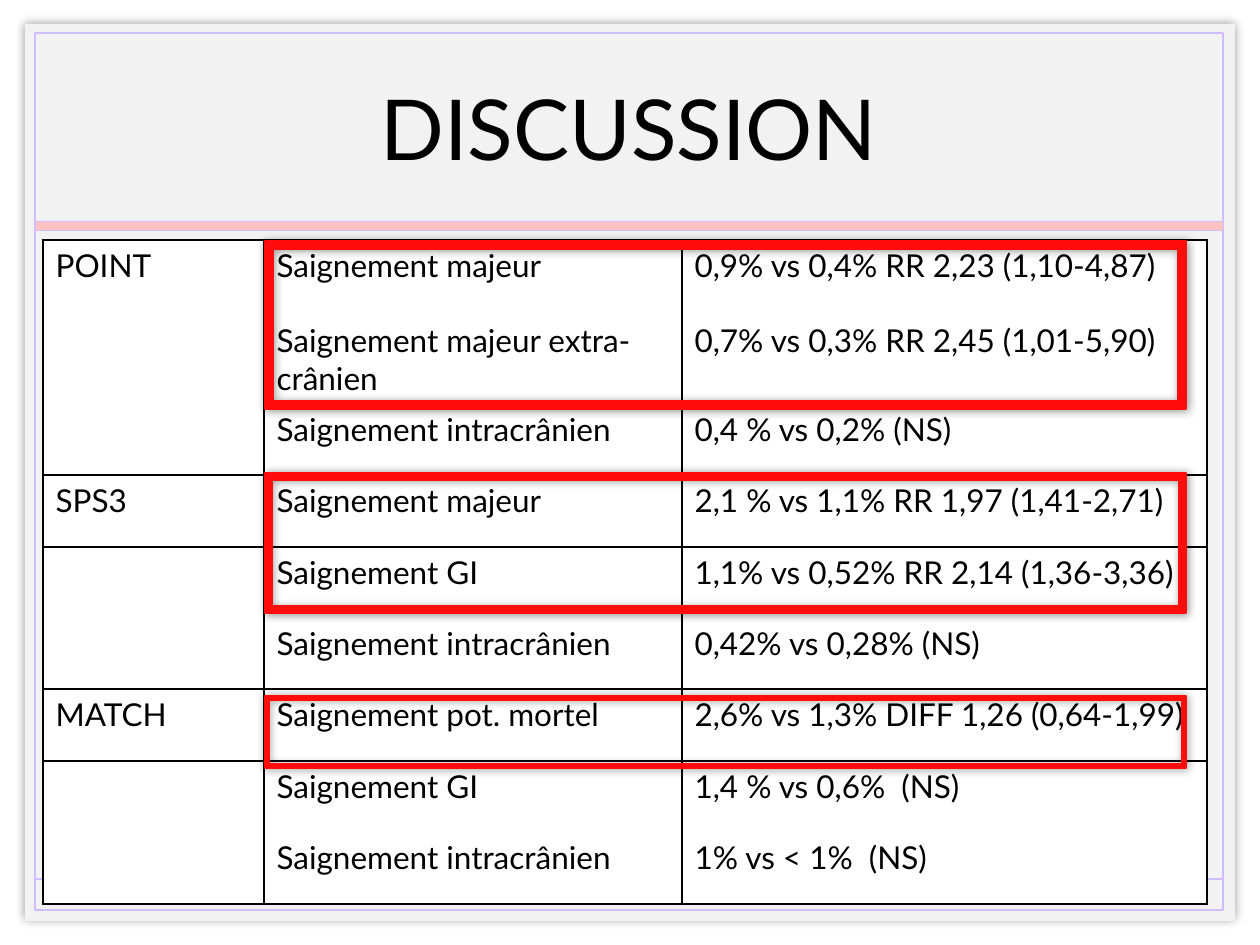
import pptx
import pptx.util
import pptx.dml.color
import pptx.enum.shapes
import pptx.enum.text
import pptx.oxml
import pptx.oxml.ns

PX = 914400 // 126
KIND = pptx.enum.shapes.MSO_SHAPE
INK, PAPER, LILAC, RED = "000000", "FFFFFF", "CFBDFF", "FF0D0D"
TRIALS = [
    ("POINT", [75, 89, 71], {2}, [
        ("Saignement majeur", "0,9% vs 0,4% RR 2,23 (1,10-4,87)"),
        ("Saignement majeur extra-crânien", "0,7% vs 0,3% RR 2,45 (1,01-5,90)"),
        ("Saignement intracrânien", "0,4 % vs 0,2% (NS)")]),
    ("SPS3", [72, 71, 71], {0, 2}, [
        ("Saignement majeur", "2,1 % vs 1,1% RR 1,97 (1,41-2,71)"),
        ("Saignement GI", "1,1% vs 0,52% RR 2,14 (1,36-3,36)"),
        ("Saignement intracrânien", "0,42% vs 0,28% (NS)")]),
    ("MATCH", [72, 71, 72], {0, 2}, [
        ("Saignement pot. mortel", "2,6% vs 1,3% DIFF 1,26 (0,64-1,99)"),
        ("Saignement GI", "1,4 % vs 0,6%  (NS)"),
        ("Saignement intracrânien", "1% vs < 1%  (NS)")]),
]


def px(*sizes):
    return [size * PX for size in sizes]


def tint(code):
    return pptx.dml.color.RGBColor.from_string(code)


def write(frame, text, size=18, font="Lato", color=INK, align="LEFT"):
    para = frame.paragraphs[0]
    para.alignment = getattr(pptx.enum.text.PP_ALIGN, align)
    run = para.add_run()
    run.text = text
    run.font.size = pptx.util.Pt(size)
    run.font.name = font
    run.font.color.rgb = tint(color)


def node(body):
    return pptx.oxml.parse_xml(body.replace(
        ">", f" {pptx.oxml.ns.nsdecls('a')}>", 1))


class Board:
    """Draws styled elements on the current slide."""

    def __init__(self, slide):
        self.slide = slide
        self.shapes = slide.shapes

    def shape(self, kind, place, fill=None, line=None, width=1, shade=False, adjust=None):
        item = self.shapes.add_shape(kind, *px(*place))
        item.shadow.inherit = False
        if fill:
            item.fill.solid()
            item.fill.fore_color.rgb = tint(fill)
        else:
            item.fill.background()
        if line:
            item.line.color.rgb = tint(line)
            item.line.width = pptx.util.Pt(width)
        else:
            item.line.fill.background()
        if adjust:
            item.adjustments[0] = adjust
        if shade:
            effect = item._element.spPr.find(pptx.oxml.ns.qn("a:effectLst"))
            effect.append(node(
                '<a:outerShdw blurRad="63500" dist="0" dir="0" rotWithShape="0">'
                f'<a:srgbClr val="{INK}"><a:alpha val="40000"/></a:srgbClr>'
                '</a:outerShdw>'))

    def line(self, start, end, color):
        item = self.shapes.add_connector(
            pptx.enum.shapes.MSO_CONNECTOR.STRAIGHT, *px(*start, *end))
        item.line.color.rgb = tint(color)
        item.line.width = pptx.util.Pt(1)
        item._element.spPr.append(node("<a:effectLst></a:effectLst>"))

    def title(self, text, place):
        frame = self.shapes.add_textbox(*px(*place)).text_frame
        frame.word_wrap = True
        frame.vertical_anchor = pptx.enum.text.MSO_ANCHOR.MIDDLE
        write(frame, text, size=48, align="CENTER")

    def edge(self, cell, sides):
        props = cell._tc.get_or_add_tcPr()
        for index, side in enumerate("LRTB"):
            paint = (f'<a:solidFill><a:srgbClr val="{INK}"/></a:solidFill>'
                     if side in sides else "<a:noFill/>")
            props.insert(index, node(f'<a:ln{side} w="19050">{paint}</a:ln{side}>'))

    def table(self, left, top, cols, trials):
        tall = sum(sum(trial[1]) for trial in trials)
        count = sum(len(trial[1]) for trial in trials)
        grid = self.shapes.add_table(
            count, len(cols), *px(left, top, sum(cols), tall)).table
        grid.first_row = grid.horz_banding = False
        for col, width in zip(grid.columns, px(*cols)):
            col.width = width
        row = 0
        for name, highs, ruled, pairs in trials:
            for step, pair in enumerate(pairs):
                grid.rows[row].height = highs[step] * PX
                sides = "LR"
                if step == 0 or step - 1 in ruled:
                    sides += "T"
                if step in ruled:
                    sides += "B"
                for col, text in enumerate(("" if step else name, *pair)):
                    cell = grid.cell(row, col)
                    cell.fill.solid()
                    cell.fill.fore_color.rgb = tint(PAPER)
                    write(cell.text_frame, text)
                    self.edge(cell, sides)
                row += 1


def main():
    deck = pptx.Presentation()
    deck.slide_width, deck.slide_height = px(1260, 945)
    board = Board(deck.slides.add_slide(deck.slide_layouts[6]))
    board.shape(KIND.RECTANGLE, (25, 24, 1210, 897), fill="F2F2F2", shade=True)
    board.shape(KIND.RECTANGLE, (35, 33, 1188, 877), line=LILAC)
    board.line((35, 879), (1223, 879), LILAC)
    board.shape(KIND.RECTANGLE, (35, 221, 1188, 9), fill="FFC2C2", line=LILAC, width=0.25)
    board.title("DISCUSSION", (123, 34, 1012, 185))
    board.table(43, 240, [221, 418, 525], TRIALS)
    for top, high, thick in ((473, 140, 0.05), (241, 168, 0.05), (696, 72, 0.06)):
        board.shape(KIND.FRAME, (265, top, 921, high), fill=RED, line=RED,
                    shade=True, adjust=thick)
    deck.save("out.pptx")


if __name__ == "__main__":
    main()
